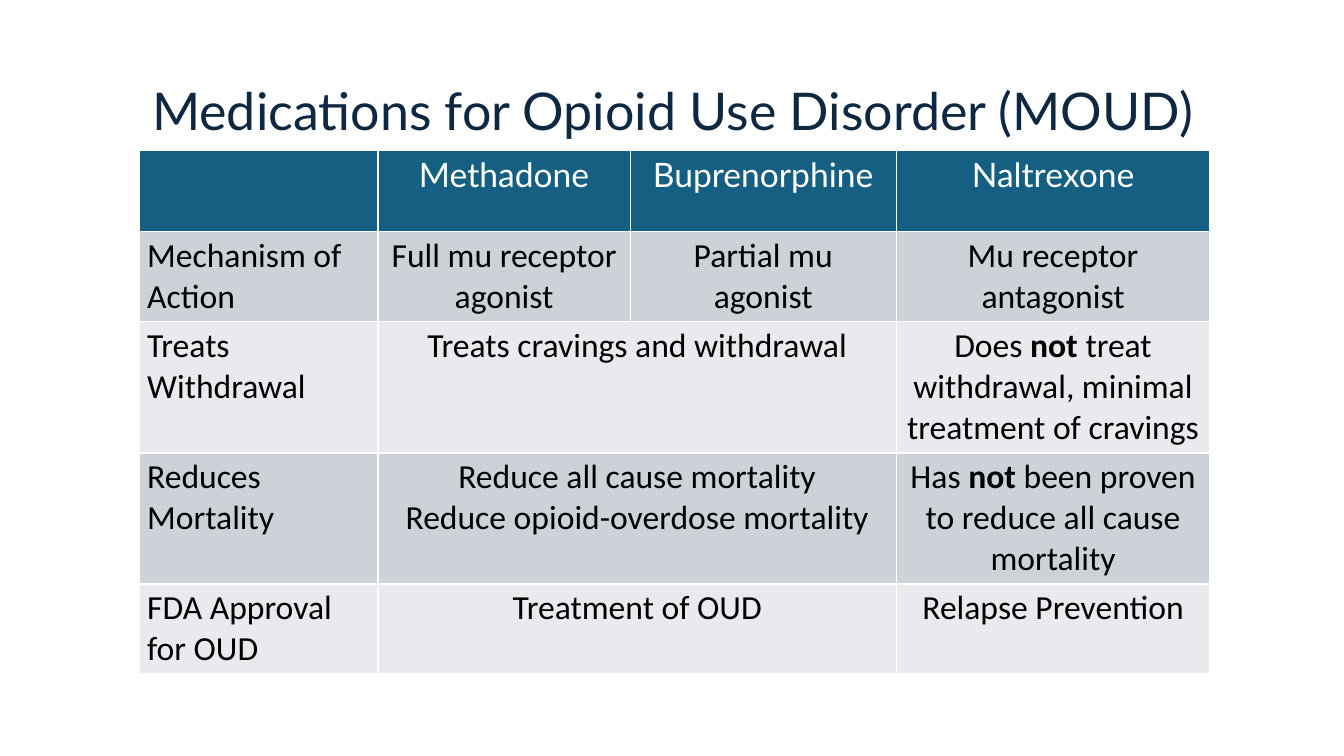
import dataclasses

import lxml.etree
import pptx
import pptx.dml.color
import pptx.enum.text
import pptx.oxml.ns
import pptx.util

ALIGN = pptx.enum.text.PP_ALIGN


@dataclasses.dataclass(frozen=True)
class Theme:
    """Colours, fonts and sizes of the slide."""

    title_color: str = "0E2841"
    header_fill: str = "156082"
    header_color: str = "FFFFFF"
    body_color: str = "000000"
    band_fills: tuple = ("CCD2D8", "E8EAED")
    border_color: str = "FFFFFF"
    border_width: int = 1
    heading_font: str = "Lato"
    body_font: str = "Calibri"
    title_size: float = 37.1
    table_size: int = 24


@dataclasses.dataclass(frozen=True)
class Box:
    """A rectangle in inches."""

    left: float
    top: float
    width: float
    height: float

    def lengths(self):
        """Return the four sides as lengths."""
        return [pptx.util.Inches(side) for side in dataclasses.astuple(self)]


THEME = Theme()
SLIDE_WIDTH, SLIDE_HEIGHT = 13.33, 7.5
TITLE_BOX = Box(0.92, 0.4, 11.5, 1.45)
TABLE_BOX = Box(1.38, 1.49, 10.62, 5.09)
COLUMN_WIDTHS = (2.37, 2.5, 2.64, 3.11)
ROW_HEIGHTS = (0.81, 0.87, 1.27, 1.27, 0.87)
TITLE = "Medications for Opioid Use Disorder (MOUD)"
ROWS = (
    ("", "Methadone", "Buprenorphine", "Naltrexone"),
    ("Mechanism of Action", "Full mu receptor agonist",
     "Partial mu\vagonist", "Mu receptor antagonist"),
    ("Treats Withdrawal", "Treats cravings and withdrawal", None,
     "Does *not* treat withdrawal, minimal treatment of cravings"),
    ("Reduces Mortality",
     "Reduce all cause mortality\nReduce opioid-overdose mortality", None,
     "Has *not* been proven to reduce all cause mortality"),
    ("FDA Approval for OUD", "Treatment of OUD", None, "Relapse Prevention"),
)


def style_paragraph(paragraph, name, size, color, alignment):
    """Set the font and alignment of a paragraph."""
    paragraph.alignment = alignment
    paragraph.font.name = name
    paragraph.font.size = pptx.util.Pt(size)
    paragraph.font.color.rgb = pptx.dml.color.RGBColor.from_string(color)


def add_title(slide, box):
    """Place and format the title placeholder in the box."""
    title = slide.shapes.title
    title.left, title.top, title.width, title.height = box.lengths()
    frame = title.text_frame
    frame.text = TITLE
    frame.auto_size = pptx.enum.text.MSO_AUTO_SIZE.NONE
    frame.vertical_anchor = pptx.enum.text.MSO_ANCHOR.MIDDLE
    paragraph = frame.paragraphs[0]
    paragraph.line_spacing = 0.9
    style_paragraph(paragraph, THEME.heading_font, THEME.title_size,
                    THEME.title_color, ALIGN.CENTER)


def add_borders(cell):
    """Draw a thin line on each side of a cell."""
    qn = pptx.oxml.ns.qn
    properties = cell._tc.get_or_add_tcPr()
    for side in ("lnL", "lnR", "lnT", "lnB"):
        line = lxml.etree.SubElement(properties, qn(f"a:{side}"))
        line.set("w", str(pptx.util.Pt(THEME.border_width)))
        fill = lxml.etree.SubElement(line, qn("a:solidFill"))
        lxml.etree.SubElement(fill, qn("a:srgbClr")).set("val", THEME.border_color)


def write_cell(cell, text, header, alignment):
    """Write lines of text in a cell, with starred words in bold."""
    cell.margin_left = cell.margin_right = pptx.util.Inches(0.08)
    cell.margin_top = cell.margin_bottom = pptx.util.Inches(0.04)
    name = THEME.heading_font if header else THEME.body_font
    color = THEME.header_color if header else THEME.body_color
    cell.text = text.replace("*", "")
    for paragraph, line in zip(cell.text_frame.paragraphs, text.split("\n")):
        if "*" in line:
            paragraph.clear()
            for index, part in enumerate(line.split("*")):
                run = paragraph.add_run()
                run.text = part
                if index % 2:
                    run.font.bold = True
        style_paragraph(paragraph, name, THEME.table_size, color, alignment)


def add_medication_table(slide, box):
    """Build the comparison table in the box, merging cells left as None."""
    table = slide.shapes.add_table(
        len(ROWS), len(COLUMN_WIDTHS), *box.lengths()).table
    for column, width in zip(table.columns, COLUMN_WIDTHS):
        column.width = pptx.util.Inches(box.width * width / sum(COLUMN_WIDTHS))
    for row, height in zip(table.rows, ROW_HEIGHTS):
        row.height = pptx.util.Inches(box.height * height / sum(ROW_HEIGHTS))
    for row_index, texts in enumerate(ROWS):
        header = row_index == 0
        color = THEME.header_fill if header else THEME.band_fills[(row_index - 1) % 2]
        for column_index, text in enumerate(texts):
            cell = table.cell(row_index, column_index)
            add_borders(cell)
            cell.fill.solid()
            cell.fill.fore_color.rgb = pptx.dml.color.RGBColor.from_string(color)
            if text is None:
                table.cell(row_index, column_index - 1).merge(cell)
            else:
                alignment = ALIGN.CENTER if column_index else ALIGN.LEFT
                write_cell(cell, text, header, alignment)


def main():
    """Build and save the presentation."""
    presentation = pptx.Presentation()
    presentation.slide_width = pptx.util.Inches(SLIDE_WIDTH)
    presentation.slide_height = pptx.util.Inches(SLIDE_HEIGHT)
    slide = presentation.slides.add_slide(presentation.slide_layouts[5])
    add_title(slide, TITLE_BOX)
    add_medication_table(slide, TABLE_BOX)
    presentation.save("out.pptx")


if __name__ == "__main__":
    main()
